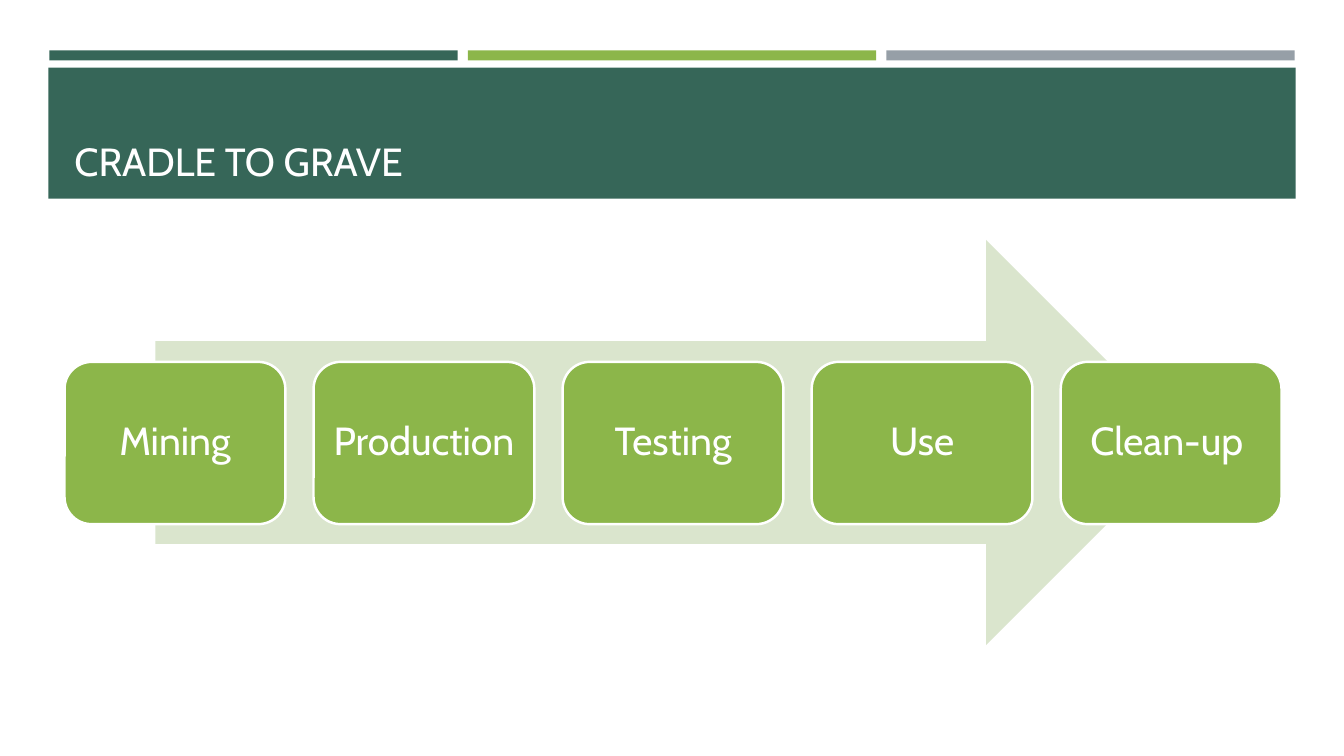
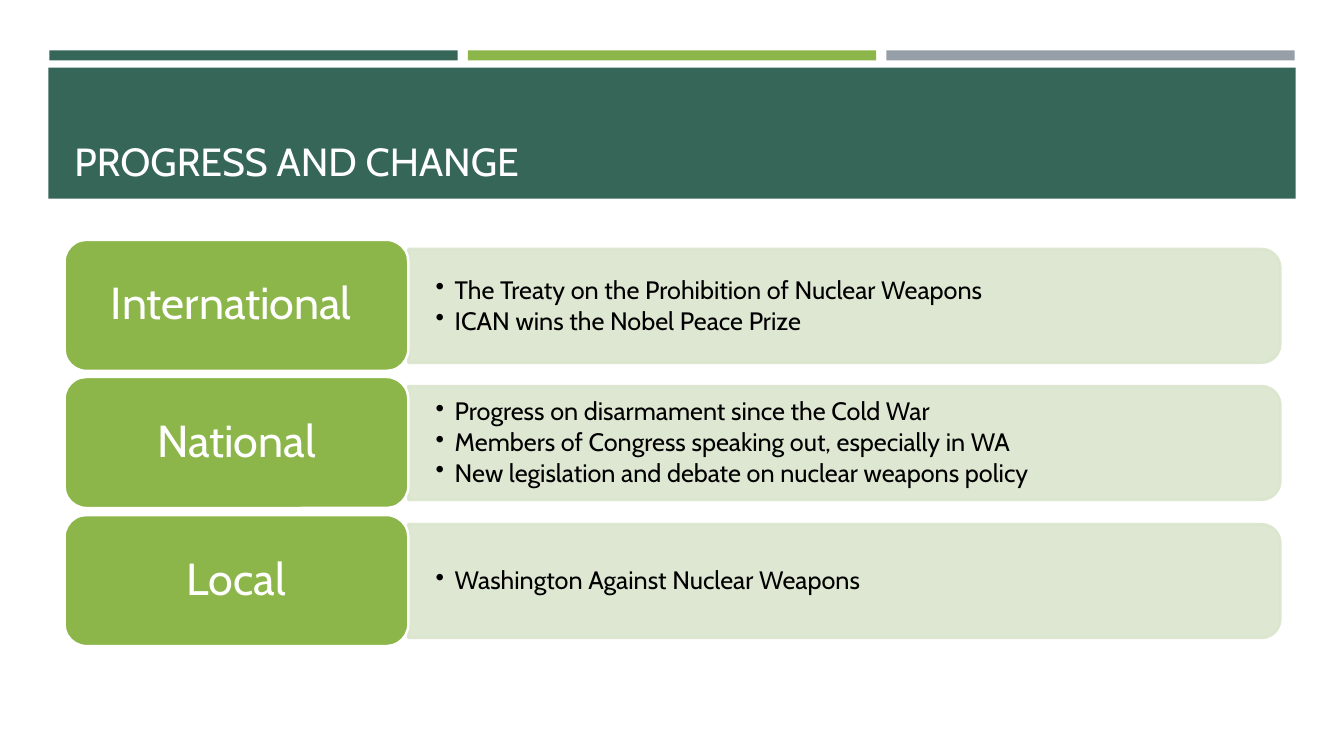
import lxml.etree
import pptx
import pptx.dml.color
import pptx.enum.shapes
import pptx.enum.text
import pptx.oxml.ns
import pptx.util

SHAPES = pptx.enum.shapes.MSO_SHAPE
ALIGN = pptx.enum.text.PP_ALIGN
ANCHOR = pptx.enum.text.MSO_ANCHOR
COLORS = {
    "pine": "366658",
    "leaf": "8CB64A",
    "gray": "969FA7",
    "pale": "DAE5CD",
    "white": "FFFFFF",
    "black": "000000",
}
STAGES = ["Mining", "Production", "Testing", "Use", "Clean-up "]
LEVELS = [
    ("International ", [
        "The Treaty on the Prohibition of Nuclear Weapons",
        "ICAN wins the Nobel Peace Prize",
    ]),
    ("National", [
        "Progress on disarmament since the Cold War",
        "Members of Congress speaking out, especially in WA",
        "New legislation and debate on nuclear weapons policy",
    ]),
    ("Local", ["Washington Against Nuclear Weapons"]),
]


def px(length):
    return pptx.util.Emu(length * 9144)


def rgb(name):
    return pptx.dml.color.RGBColor.from_string(COLORS[name])


class Deck:
    """Holds the shared style and the slide being built."""

    font = "Cabin"
    outline = 1.75

    def __init__(self):
        self.presentation = pptx.Presentation()
        self.presentation.slide_width = px(1333)
        self.presentation.slide_height = px(750)
        self.slide = None

    def new_slide(self, title):
        layout = self.presentation.slide_layouts[6]
        self.slide = self.presentation.slides.add_slide(layout)
        for column, color in enumerate(["pine", "leaf", "gray"]):
            self.shape(SHAPES.RECTANGLE, 49 + column * 415, 50, 405, 10, color)
        self.shape(SHAPES.RECTANGLE, 48, 67, 1237, 130, "pine")
        heading = self.text_box(64, 77, 1206, 111, ANCHOR.BOTTOM, 10, 5)
        heading.text = title
        self.style(heading.paragraphs[0], 28, "white")

    def shape(self, kind, left, top, width, height, fill, line=None):
        shape = self.slide.shapes.add_shape(
            kind, px(left), px(top), px(width), px(height))
        shape.shadow.inherit = False
        shape.fill.solid()
        shape.fill.fore_color.rgb = rgb(fill)
        if line:
            shape.line.color.rgb = rgb(line)
            shape.line.width = pptx.util.Pt(self.outline)
        else:
            shape.line.fill.background()
        return shape

    def frame(self, shape, anchor, side, end):
        frame = shape.text_frame
        frame.word_wrap = True
        frame.vertical_anchor = anchor
        frame.margin_left = frame.margin_right = px(side)
        frame.margin_top = frame.margin_bottom = px(end)
        return frame

    def text_box(self, left, top, width, height, anchor, side, end):
        box = self.slide.shapes.add_textbox(
            px(left), px(top), px(width), px(height))
        return self.frame(box, anchor, side, end)

    def style(self, paragraph, size, color):
        paragraph.font.name = self.font
        paragraph.font.size = pptx.util.Pt(size)
        paragraph.font.color.rgb = rgb(color)

    def label(self, text, left, top, width, height, size):
        shape = self.shape(SHAPES.ROUNDED_RECTANGLE,
                           left, top, width, height, "leaf", "white")
        frame = self.frame(shape, ANCHOR.MIDDLE, 10, 7)
        frame.text = text
        paragraph = frame.paragraphs[0]
        paragraph.alignment = ALIGN.CENTER
        paragraph.line_spacing = 0.9
        self.style(paragraph, size, "white")

    def panel(self, left, top, width, height):
        shift = (width - height) // 2
        shape = self.shape(SHAPES.ROUND_2_SAME_RECTANGLE, left + shift,
                           top - shift, height, width, "pale", "pale")
        shape.rotation = 90
        qn = pptx.oxml.ns.qn
        for color in shape.element.spPr.iter(qn("a:srgbClr")):
            lxml.etree.SubElement(color, qn("a:alpha"), val="90000")

    def bullets(self, lines, left, top, width, height):
        frame = self.text_box(left, top, width, height, ANCHOR.MIDDLE, 27, 5)
        qn = pptx.oxml.ns.qn
        for index, line in enumerate(lines):
            paragraph = frame.add_paragraph() if index else frame.paragraphs[0]
            paragraph.text = line
            properties = paragraph._p.get_or_add_pPr()
            properties.set("marL", str(px(19)))
            properties.set("indent", str(px(-19)))
            bullet_color = lxml.etree.SubElement(properties, qn("a:buClr"))
            lxml.etree.SubElement(
                bullet_color, qn("a:srgbClr"), val=COLORS["black"])
            lxml.etree.SubElement(properties, qn("a:buChar"), char="•")
            paragraph.line_spacing = 0.9
            if index:
                paragraph.space_before = pptx.util.Pt(2.7)
            self.style(paragraph, 18, "black")


def main():
    deck = Deck()

    deck.new_slide("CRADLE TO GRAVE")
    deck.shape(SHAPES.RIGHT_ARROW, 154, 238, 1025, 402, "pale")
    for index, stage in enumerate(STAGES):
        deck.label(stage, 64 + index * 247, 359, 219, 161, 28)

    deck.new_slide("PROGRESS AND CHANGE")
    for index, (level, points) in enumerate(LEVELS):
        top = 238 + index * 273 // 2
        deck.panel(405, top + 9, 865, 113)
        deck.bullets(points, 405, top + 15, 860, 102)
        deck.label(level, 64, top, 341, 130, 32)

    deck.presentation.save("out.pptx")


if __name__ == "__main__":
    main()
